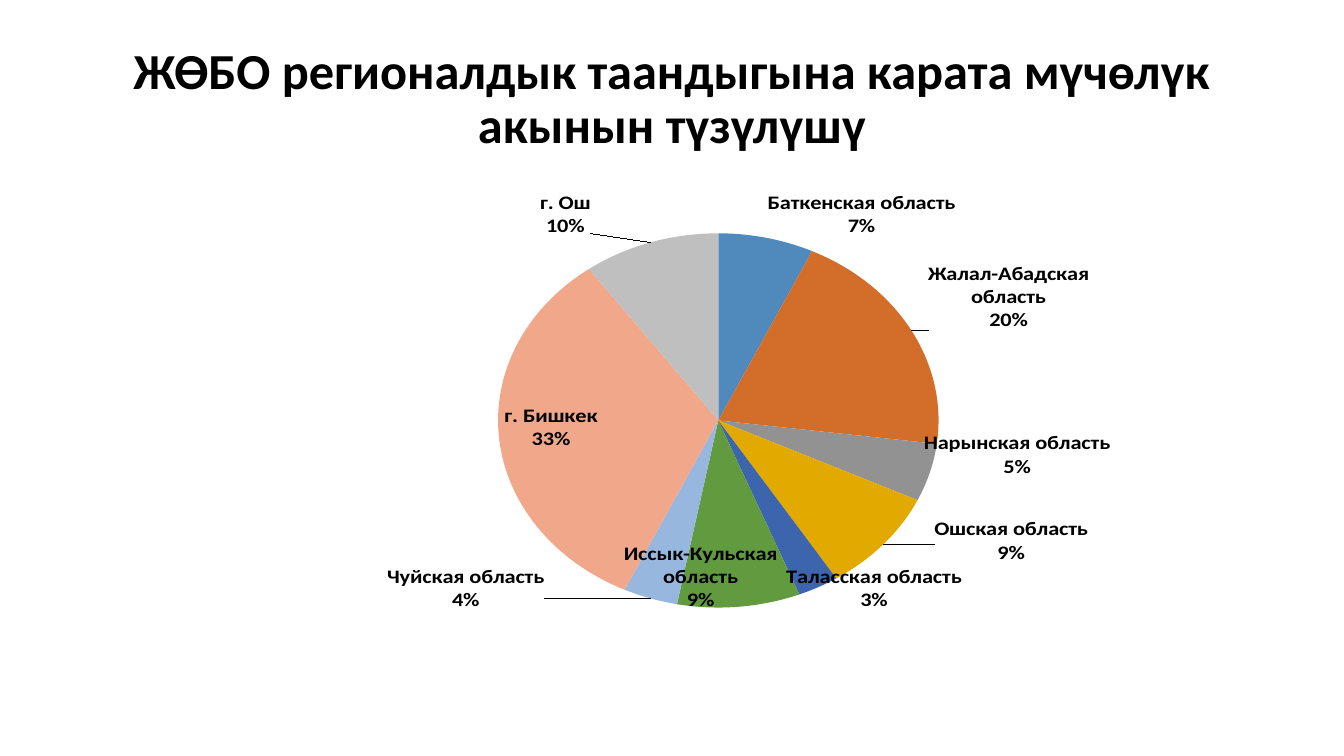
from lxml import etree
from pptx import Presentation
from pptx.chart.data import CategoryChartData
from pptx.dml.color import RGBColor
from pptx.enum.chart import XL_CHART_TYPE, XL_LABEL_POSITION
from pptx.enum.text import MSO_ANCHOR, PP_ALIGN
from pptx.oxml import parse_xml
from pptx.oxml.ns import nsdecls, qn
from pptx.util import Inches, Pt

PIE = XL_CHART_TYPE.PIE
OUTSIDE = XL_LABEL_POSITION.OUTSIDE_END
MIDDLE, CENTER = MSO_ANCHOR.MIDDLE, PP_ALIGN.CENTER

TITLE = "ЖӨБО регионалдык таандыгына карата мүчөлүк акынын түзүлүшү"
FONT = "Calibri"
LABEL_SIZE = 16
COLORS = {
    "text": "000000", "blue": "5089BC", "orange": "D26E2A", "gray": "929292",
    "gold": "E2AA00", "navy": "3C65AE", "green": "629A3F",
    "light blue": "97B7DF", "salmon": "F1A78A", "silver": "BFBFBF",
}
# Region, percent, colour, label shift as shares of the chart's size
REGIONS = [
    ("Баткенская область", 7, "blue", (0, 0)),
    ("Жалал-Абадская область", 20, "orange", (0.01, 0.01)),
    ("Нарынская область", 5, "gray", (-0.01, -0.1)),
    ("Ошская область", 9, "gold", (0.04, -0.07)),
    ("Таласская область", 3, "navy", (-0.03, -0.04)),
    ("Иссык-Кульская область", 9, "green", (-0.1, -0.15)),
    ("Чуйская область", 4, "light blue", (-0.09, -0.07)),
    ("г. Бишкек", 33, "salmon", (0.09, -0.08)),
    ("г. Ош", 10, "silver", (-0.05, -0.01)),
]

# Slide grid, in inches
WIDTH, HEIGHT = 13.33, 7.5
MARGIN = 0.92
BODY_W = WIDTH - 2 * MARGIN
TITLE_TOP, TITLE_H = 0.4, 1.19
CHART_TOP, CHART_H = 1.85, 4.91
# Plot area as shares of the chart: left, top, width, height
PLOT = (0.08, 0.1, 0.92, 0.89)


def color(name):
    return RGBColor.from_string(COLORS[name])


def layout_xml(*values, modes=""):
    parts = "".join(f'<c:{key} val="{value}"/>'
                    for key, value in zip("xywh", values))
    return (f'<c:layout {nsdecls("c")}><c:manualLayout>{modes}{parts}'
            '</c:manualLayout></c:layout>')


def label_text():
    return (f'<c:txPr {nsdecls("a")}><a:bodyPr wrap="square"/><a:p><a:pPr>'
            f'<a:defRPr sz="{LABEL_SIZE * 100}" b="1"><a:solidFill>'
            f'<a:srgbClr val="{COLORS["text"]}"/></a:solidFill>'
            f'<a:latin typeface="{FONT}"/></a:defRPr></a:pPr>'
            '<a:endParaRPr/></a:p></c:txPr>')


def region_label(i, shift):
    return parse_xml(
        f'<c:dLbl {nsdecls("c")}><c:idx val="{i}"/>' + layout_xml(*shift)
        + '<c:numFmt formatCode="0%" sourceLinked="0"/><c:spPr/>'
        + label_text()
        + '<c:dLblPos val="outEnd"/><c:showLegendKey val="0"/>'
        '<c:showVal val="0"/><c:showCatName val="1"/><c:showSerName val="0"/>'
        '<c:showPercent val="1"/><c:showBubbleSize val="0"/>'
        '<c:separator>\n</c:separator></c:dLbl>')


prs = Presentation()
prs.slide_width, prs.slide_height = Inches(WIDTH), Inches(HEIGHT)
s = prs.slides.add_slide(prs.slide_layouts[6])

# Title
tf = s.shapes.add_textbox(Inches(MARGIN), Inches(TITLE_TOP),
                          Inches(BODY_W), Inches(TITLE_H)).text_frame
tf.word_wrap = True
tf.vertical_anchor = MIDDLE
p = tf.paragraphs[0]
p.text = TITLE
p.alignment, p.line_spacing = CENTER, 0.9
font = p.runs[0].font
font.name, font.size, font.bold = FONT, Pt(36), True
font.color.rgb = color("text")

# Pie chart
data = CategoryChartData()
data.categories = [region[0] for region in REGIONS]
data.add_series("Series 1", [region[1] for region in REGIONS])
chart = s.shapes.add_chart(PIE, Inches(MARGIN), Inches(CHART_TOP),
                           Inches(BODY_W), Inches(CHART_H), data).chart
chart.has_title = chart.has_legend = False
chart.font.name, chart.font.size = FONT, Pt(LABEL_SIZE)
chart.font.bold = True
chart.font.color.rgb = color("text")
plot = chart.plots[0]
plot.vary_by_categories = True
plot_area = chart._chartSpace.chart.plotArea
for layout in plot_area.findall(qn("c:layout")):
    plot_area.remove(layout)
plot_area.insert(0, parse_xml(layout_xml(
    *PLOT, modes='<c:layoutTarget val="inner"/><c:xMode val="edge"/>'
                 '<c:yMode val="edge"/>')))

# Region labels
series = plot.series[0]
labels = series.data_labels
labels.show_value = False
labels.show_category_name = labels.show_percentage = True
labels.number_format, labels.number_format_is_linked = "0%", False
labels.position = OUTSIDE
separator = etree.Element(qn("c:separator"))
separator.text = "\n"
labels._element.find(qn("c:showBubbleSize")).addnext(separator)

# Slices
for i, (_, _, fill_name, shift) in enumerate(REGIONS):
    fill = series.points[i].format.fill
    fill.solid()
    fill.fore_color.rgb = color(fill_name)
    labels._element.insert(i, region_label(i, shift))

prs.save("out.pptx")
